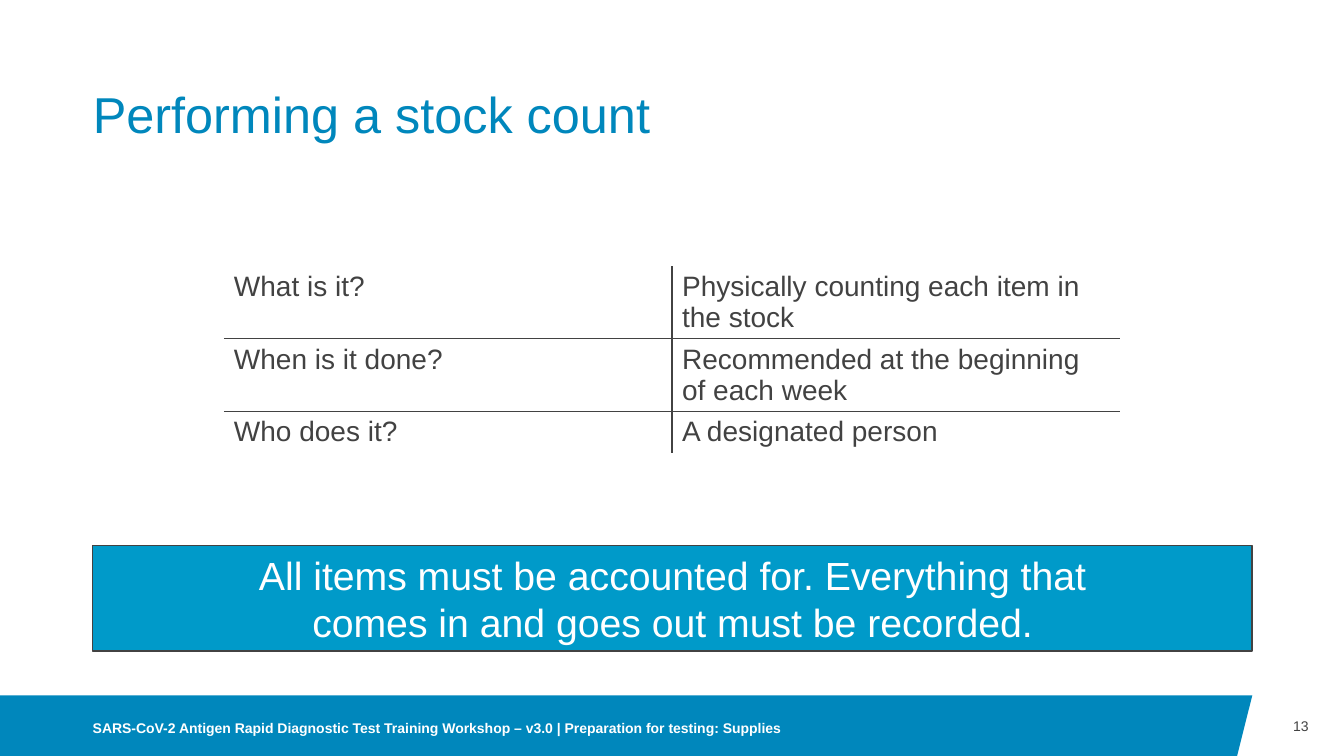
from dataclasses import dataclass

from lxml.etree import SubElement
from pptx import Presentation
from pptx.dml.color import RGBColor
from pptx.enum.shapes import MSO_SHAPE
from pptx.enum.text import MSO_ANCHOR, MSO_AUTO_SIZE, PP_ALIGN
from pptx.oxml.ns import qn
from pptx.shapes.autoshape import Shape
from pptx.slide import Slide
from pptx.table import _Cell
from pptx.text.text import TextFrame
from pptx.util import Inches, Pt


@dataclass(frozen=True)
class Theme:
    font: str = "Arial"
    blue: str = "0087BC"
    bright_blue: str = "009AC9"
    gray: str = "424242"
    white: str = "FFFFFF"
    title_size: int = 36
    callout_size: int = 28
    table_size: int = 20
    small_size: int = 10
    line_width: float = 1


@dataclass(frozen=True)
class Area:
    left: float
    top: float
    width: float
    height: float

    def lengths(self) -> list[int]:
        return [Inches(n) for n in (self.left, self.top, self.width, self.height)]


@dataclass(frozen=True)
class TextStyle:
    size: int
    color: str
    align: PP_ALIGN = PP_ALIGN.LEFT
    anchor: MSO_ANCHOR = MSO_ANCHOR.MIDDLE
    bold: bool = False
    inset: float = 0


@dataclass(frozen=True)
class Label:
    text: str
    area: Area
    style: TextStyle


THEME = Theme()
MARGIN = 0.92
CONTENT_WIDTH = 11.5
RIGHT_EDGE = MARGIN + CONTENT_WIDTH
SLIDE_WIDTH, SLIDE_HEIGHT = 13.33, 7.5
BAND_TOP = 6.9

TITLE = Label(
    "Performing a stock count",
    Area(MARGIN, 0.4, CONTENT_WIDTH, 1.03),
    TextStyle(THEME.title_size, THEME.blue, anchor=MSO_ANCHOR.BOTTOM),
)
CALLOUT = Label(
    "All items must be accounted for. Everything that\n"
    "comes in and goes out must be recorded.",
    Area(MARGIN, 5.41, CONTENT_WIDTH, 1.05),
    TextStyle(THEME.callout_size, THEME.white, PP_ALIGN.CENTER, inset=0.06),
)
FOOTER_LABELS = [
    Label(
        "SARS-CoV-2 Antigen Rapid Diagnostic Test Training Workshop – v3.0"
        " | Preparation for testing: Supplies",
        Area(MARGIN, 6.95, 8, 0.55),
        TextStyle(THEME.small_size, THEME.white, bold=True),
    ),
    Label(
        "13",
        Area(RIGHT_EDGE, BAND_TOP, 0.56, 0.6),
        TextStyle(THEME.small_size, THEME.gray, PP_ALIGN.RIGHT),
    ),
]
TABLE_AREA = Area(2.22, 2.64, 8.89, 1.23)
STOCK_COUNT_ROWS = [
    ("What is it?", "Physically counting each item in the stock"),
    ("When is it done?", "Recommended at the beginning of each week"),
    ("Who does it?", "A designated person"),
]


def write_text(frame: TextFrame, text: str, style: TextStyle) -> None:
    frame.text = text
    frame.word_wrap = True
    frame.auto_size = MSO_AUTO_SIZE.NONE
    frame.vertical_anchor = style.anchor
    frame.margin_left = frame.margin_right = Inches(style.inset)
    frame.margin_top = frame.margin_bottom = Inches(style.inset)
    for para in frame.paragraphs:
        para.alignment = style.align
        para.font.name = THEME.font
        para.font.size = Pt(style.size)
        para.font.bold = style.bold
        para.font.color.rgb = RGBColor.from_string(style.color)


def fill_shape(shape: Shape, color: str) -> None:
    shape.shadow.inherit = False
    shape.fill.solid()
    shape.fill.fore_color.rgb = RGBColor.from_string(color)


def add_title(page: Slide) -> None:
    title = page.shapes.title
    title.left, title.top, title.width, title.height = TITLE.area.lengths()
    write_text(title.text_frame, TITLE.text, TITLE.style)
    title.text_frame.paragraphs[0].line_spacing = 0.9


def add_label(page: Slide, label: Label) -> None:
    box = page.shapes.add_textbox(*label.area.lengths())
    write_text(box.text_frame, label.text, label.style)


def add_footer_band(page: Slide) -> None:
    builder = page.shapes.build_freeform(0, Inches(BAND_TOP))
    corners = [(RIGHT_EDGE, BAND_TOP), (12.27, SLIDE_HEIGHT), (0, SLIDE_HEIGHT)]
    builder.add_line_segments([(Inches(x), Inches(y)) for x, y in corners])
    band = builder.convert_to_shape()
    fill_shape(band, THEME.blue)
    band.line.fill.background()


def add_callout(page: Slide) -> None:
    box = page.shapes.add_shape(MSO_SHAPE.RECTANGLE, *CALLOUT.area.lengths())
    fill_shape(box, THEME.bright_blue)
    box.line.color.rgb = RGBColor.from_string(THEME.gray)
    box.line.width = Pt(THEME.line_width)
    write_text(box.text_frame, CALLOUT.text, CALLOUT.style)


def set_borders(cell: _Cell, visible: dict[str, bool]) -> None:
    """Draw the named sides (L, R, T, B in schema order) and blank the others."""
    properties = cell._tc.get_or_add_tcPr()
    for index, (side, shown) in enumerate(visible.items()):
        line = SubElement(properties, qn(f"a:ln{side}"), w=str(Pt(THEME.line_width)))
        if shown:
            fill = SubElement(line, qn("a:solidFill"))
            SubElement(fill, qn("a:srgbClr"), val=THEME.gray)
        else:
            SubElement(line, qn("a:noFill"))
        properties.insert(index, line)


def add_stock_count_table(page: Slide) -> None:
    row_count, column_count = len(STOCK_COUNT_ROWS), len(STOCK_COUNT_ROWS[0])
    table = page.shapes.add_table(
        row_count, column_count, *TABLE_AREA.lengths()
    ).table
    table.first_row = table.horz_banding = False
    style = TextStyle(THEME.table_size, THEME.gray)
    for row, texts in enumerate(STOCK_COUNT_ROWS):
        for column, text in enumerate(texts):
            cell = table.cell(row, column)
            cell.text = text
            cell.fill.background()
            para = cell.text_frame.paragraphs[0]
            para.font.name = THEME.font
            para.font.size = Pt(style.size)
            para.font.color.rgb = RGBColor.from_string(style.color)
            set_borders(cell, {
                "L": column > 0,
                "R": column < column_count - 1,
                "T": row > 0,
                "B": row < row_count - 1,
            })


def main() -> None:
    deck = Presentation()
    deck.slide_width, deck.slide_height = Inches(SLIDE_WIDTH), Inches(SLIDE_HEIGHT)
    title_only = deck.slide_layouts.get_by_name("Title Only")
    page = deck.slides.add_slide(title_only)
    add_footer_band(page)
    add_title(page)
    add_stock_count_table(page)
    add_callout(page)
    for label in FOOTER_LABELS:
        add_label(page, label)
    deck.save("out.pptx")


if __name__ == "__main__":
    main()
